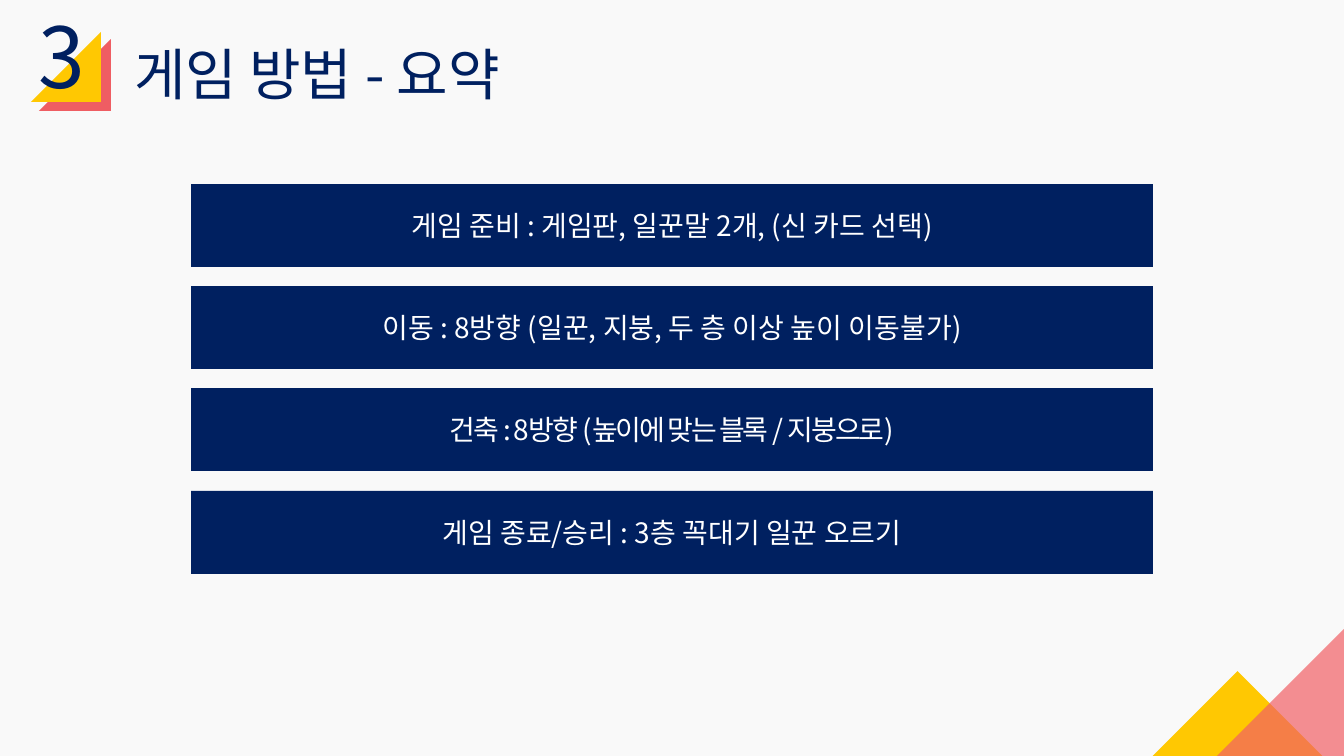
"""Build the game rules summary slide."""
from lxml.etree import SubElement
from pptx import Presentation
from pptx.dml.color import RGBColor
from pptx.enum.shapes import MSO_SHAPE as SHAPE
from pptx.enum.text import MSO_ANCHOR as ANCHOR, MSO_AUTO_SIZE as AUTO, PP_ALIGN as ALIGN
from pptx.oxml.ns import qn
from pptx.util import Pt

PX = 914400 / 100.8
FONT = "Noto Sans CJK KR"
COLORS = {"paper": "F9F9F9", "navy": "002060", "white": "FFFFFF",
          "yellow": "FFC802", "red": "EB1C24", "coral": "F16065"}


def add_solid(shape_type, box, color, rotation=0, alpha=100):
    sp = s.shapes.add_shape(shape_type, *[round(v * PX) for v in box])
    sp.shadow.inherit = False
    sp.rotation = rotation
    sp.line.fill.background()
    sp.fill.solid()
    sp.fill.fore_color.rgb = RGBColor.from_string(COLORS[color])
    if alpha < 100:
        clr = sp._element.spPr.find(qn("a:solidFill"))[0]
        SubElement(clr, qn("a:alpha"), val=str(alpha * 1000))
    return sp


def write(sp, text, size, color, align, spacing=0, **frame):
    tf = sp.text_frame
    for name, value in frame.items():
        setattr(tf, name, value)
    p = tf.paragraphs[0]
    p.alignment = align
    p.line_spacing = 1.0
    r = p.add_run()
    r.text = text
    for name, value in {"size": Pt(size), "name": FONT}.items():
        setattr(r.font, name, value)
    r.font.color.rgb = RGBColor.from_string(COLORS[color])
    rPr = r._r.get_or_add_rPr()
    SubElement(rPr, qn("a:ea"), typeface=FONT)
    if spacing:
        rPr.set("spc", str(spacing))


prs = Presentation()
prs.slide_width, prs.slide_height = round(1344 * PX), round(756 * PX)
s = prs.slides.add_slide(prs.slide_layouts[5])
s.background.fill.solid()
s.background.fill.fore_color.rgb = RGBColor.from_string(COLORS["paper"])

triangles = [
    ((39, 39, 72, 72), "red", 270, 70),
    ((31, 32, 70, 70), "yellow", 270, 100),
    ((1175, 697, 125, 125), "yellow", 135, 100),
    ((1214, 629, 130, 130), "coral", 270, 70),
]
for box, color, rotation, alpha in triangles:
    add_solid(SHAPE.RIGHT_TRIANGLE, box, color, rotation, alpha)

number = s.shapes.add_textbox(*[round(v * PX) for v in (29, 0, 95, 112)])
write(number, "3", 60, "navy", ALIGN.LEFT, word_wrap=True, auto_size=AUTO.SHAPE_TO_FIT_TEXT)

title = s.shapes.title
for name, value in {"left": 124, "top": 34, "width": 593, "height": 78}.items():
    setattr(title, name, round(value * PX))
write(title, "게임 방법 - 요약", 40, "navy", ALIGN.LEFT, word_wrap=True,
      vertical_anchor=ANCHOR.TOP, auto_size=AUTO.SHAPE_TO_FIT_TEXT)

steps = [
    ("게임 준비 : 게임판, 일꾼말 2개, (신 카드 선택)", 0),
    ("이동 : 8방향 (일꾼, 지붕, 두 층 이상 높이 이동불가)", 0),
    ("건축 : 8방향 (높이에 맞는 블록 / 지붕으로)", -150),
    ("게임 종료/승리 : 3층 꼭대기 일꾼 오르기", 0),
]
for i, (text, spacing) in enumerate(steps):
    bar = add_solid(SHAPE.RECTANGLE, (191, 184 + i * 307 // 3, 962, 83), "navy")
    write(bar, text, 20, "white", ALIGN.CENTER, spacing, word_wrap=True,
          vertical_anchor=ANCHOR.MIDDLE)

prs.save("out.pptx")
